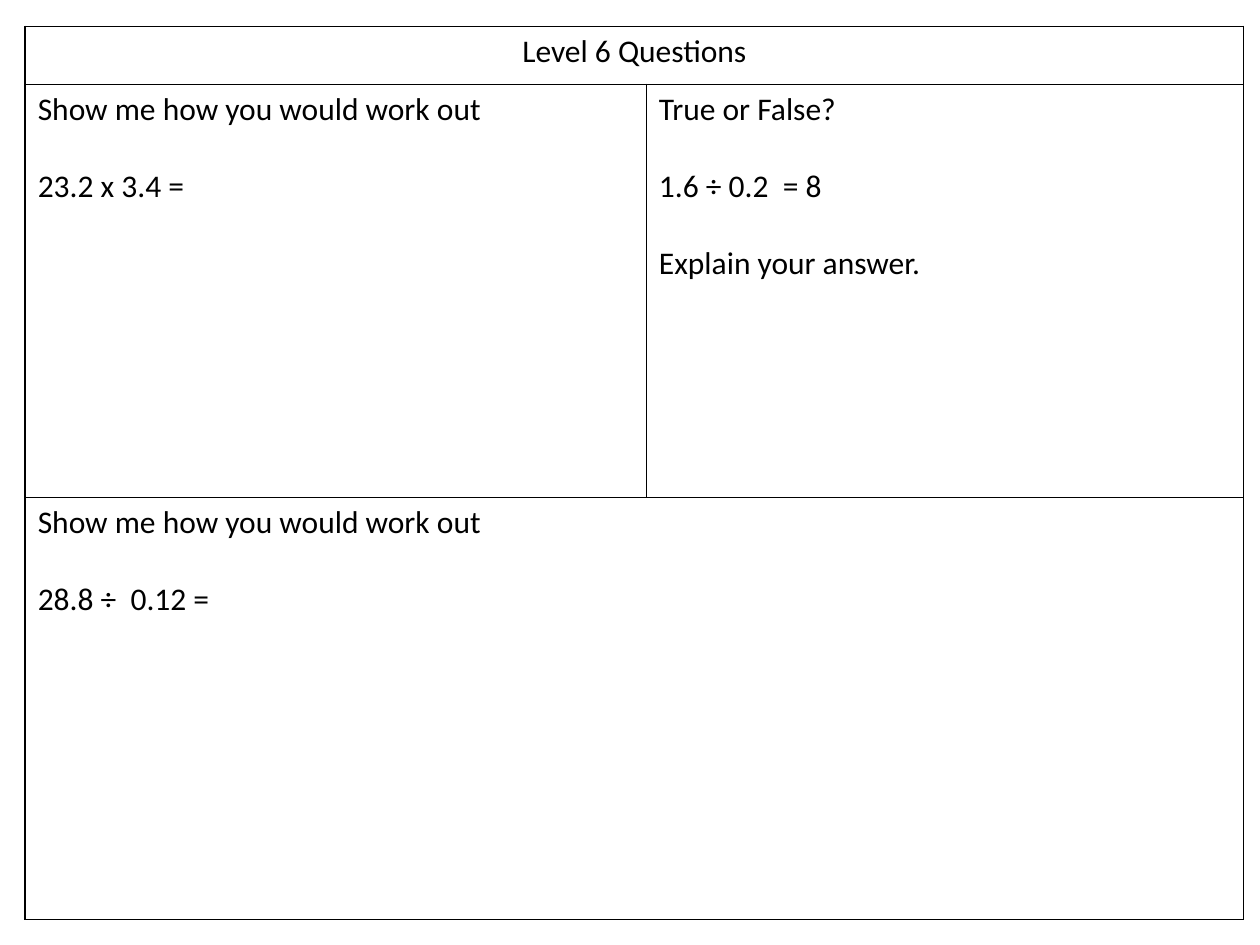
from lxml import etree
from pptx import Presentation
from pptx.dml.color import RGBColor
from pptx.enum.text import PP_ALIGN
from pptx.oxml.ns import qn
from pptx.util import Inches, Pt

BLACK = RGBColor(0, 0, 0)
WHITE = RGBColor(255, 255, 255)
LEFT = PP_ALIGN.LEFT
CENTER = PP_ALIGN.CENTER
BLANK_LAYOUT = 6
COLUMN_WIDTHS = [4.93, 4.74]
ROW_HEIGHTS = [0.46, 3.28, 3.35]
QUESTIONS = [
    (1, 0, ["Show me how you would work out", "23.2 x 3.4 ="]),
    (1, 1, ["True or False?", "1.6 ÷ 0.2  = 8", "Explain your answer."]),
    (2, 0, ["Show me how you would work out", "28.8 ÷  0.12 ="]),
]


def write_text(frame, lines, size=18, font="Calibri", color=BLACK, align=LEFT, gap=22):
    for index, line in enumerate(lines):
        para = frame.add_paragraph() if index else frame.paragraphs[0]
        para.alignment = align
        if index:
            para.space_before = Pt(gap)
        span = para.add_run()
        span.text = line
        span.font.size = Pt(size)
        span.font.name = font
        span.font.color.rgb = color


def style_cell(cell, width=1, color=BLACK):
    cell.fill.solid()
    cell.fill.fore_color.rgb = WHITE
    properties = cell._tc.get_or_add_tcPr()
    for index, side in enumerate(("lnL", "lnR", "lnT", "lnB")):
        border = etree.Element(qn(f"a:{side}"), w=str(Pt(width)))
        fill = etree.SubElement(border, qn("a:solidFill"))
        etree.SubElement(fill, qn("a:srgbClr"), val=str(color))
        properties.insert(index, border)


def add_question_table(page, left, top):
    table = page.shapes.add_table(
        len(ROW_HEIGHTS), len(COLUMN_WIDTHS), Inches(left), Inches(top),
        Inches(sum(COLUMN_WIDTHS)), Inches(sum(ROW_HEIGHTS)),
    ).table
    table.first_row = False
    table.horz_banding = False
    for column, width in zip(table.columns, COLUMN_WIDTHS):
        column.width = Inches(width)
    for row, height in zip(table.rows, ROW_HEIGHTS):
        row.height = Inches(height)
    for cell in table.iter_cells():
        style_cell(cell)
    for row in (0, 2):
        table.cell(row, 0).merge(table.cell(row, 1))
    return table


def main():
    deck = Presentation()
    deck.slide_width = Inches(10)
    deck.slide_height = Inches(7.5)
    page = deck.slides.add_slide(deck.slide_layouts[BLANK_LAYOUT])
    table = add_question_table(page, 0.2, 0.21)
    write_text(table.cell(0, 0).text_frame, ["Level 6 Questions"], align=CENTER)
    for row, column, lines in QUESTIONS:
        write_text(table.cell(row, column).text_frame, lines)
    deck.save("out.pptx")


if __name__ == "__main__":
    main()
